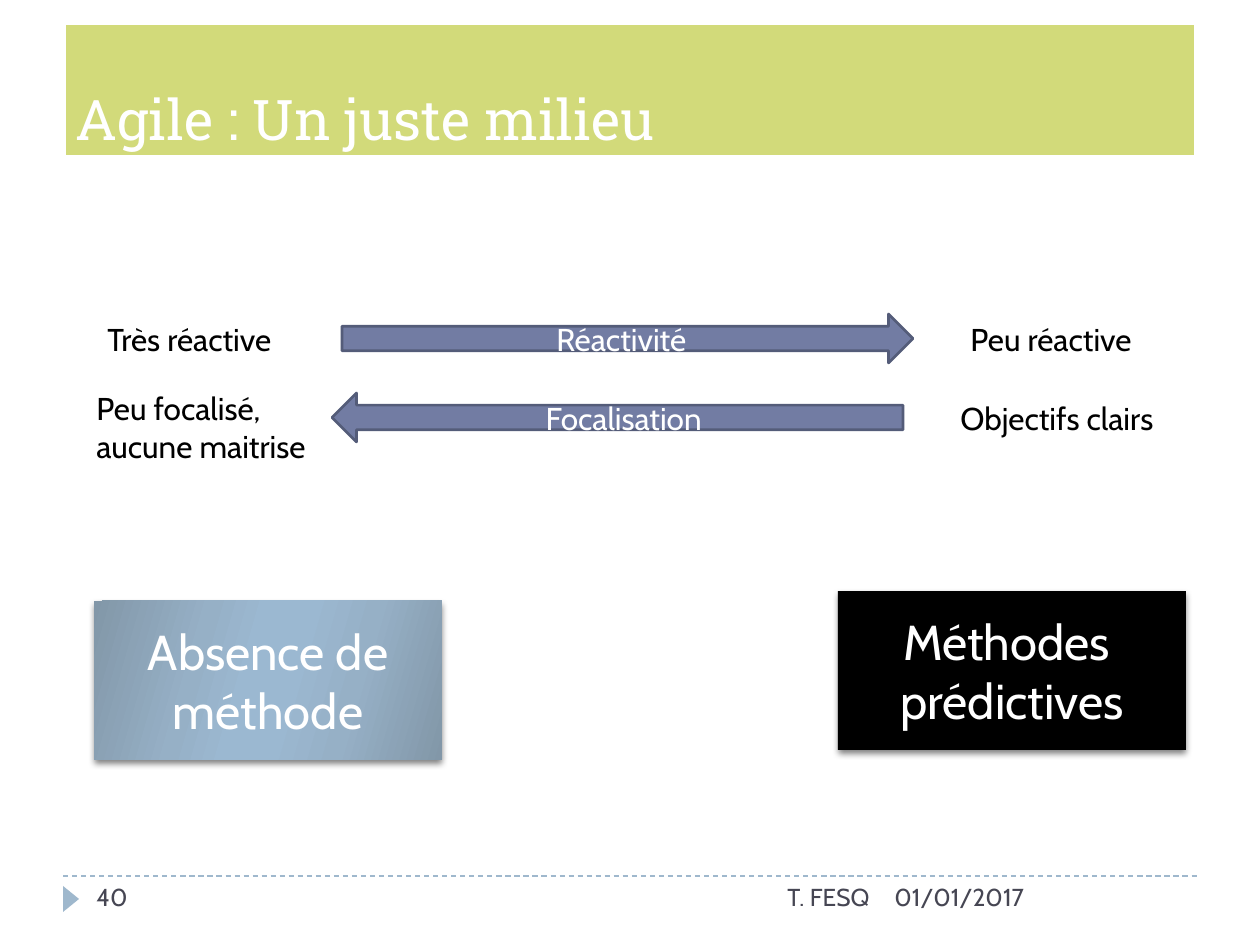
"""Build the slide placing agile between no method and predictive methods."""
from pptx import Presentation, util as u
from pptx.dml.color import RGBColor
from pptx.enum import dml, shapes, text
from pptx.oxml import parse_xml
from pptx.oxml.ns import nsdecls

PX = 914400 / 126
COLORS = {
    "white": "FFFFFF", "black": "000000", "lime": "D2DA7A", "sky": "9FB8CD",
    "slate": "464653", "indigo": "727CA3", "navy": "545C79",
}
LEFT, CENTER, RIGHT = text.PP_ALIGN.LEFT, text.PP_ALIGN.CENTER, text.PP_ALIGN.RIGHT
TOP, MIDDLE, BOTTOM = text.MSO_ANCHOR.TOP, text.MSO_ANCHOR.MIDDLE, text.MSO_ANCHOR.BOTTOM
KIND = shapes.MSO_SHAPE


def add_figure(kind, bounds, fill, line=None, width=0):
    figure = page.shapes.add_shape(kind, *[round(n * PX) for n in bounds])
    figure.shadow.inherit = False
    figure.fill.solid()
    figure.fill.fore_color.rgb = RGBColor.from_string(COLORS[fill])
    if line:
        figure.line.color.rgb = RGBColor.from_string(COLORS[line])
        figure.line.width = u.Pt(width)
    else:
        figure.line.fill.background()
    return figure


def write(box, words, size, color, align=LEFT, anchor=TOP, font="Cabin"):
    frame = box.text_frame
    frame.word_wrap = True
    frame.vertical_anchor = anchor
    frame.text = words
    for para in frame.paragraphs:
        para.alignment = align
        for span in para.runs:
            span.font.name = font
            span.font.size = u.Pt(size)
            span.font.color.rgb = RGBColor.from_string(COLORS[color])


deck = Presentation()
deck.slide_width, deck.slide_height = u.Inches(10), u.Inches(7.5)
page = deck.slides.add_slide(deck.slide_layouts[6])

rule = page.shapes.add_connector(
    shapes.MSO_CONNECTOR.STRAIGHT, *[round(n * PX) for n in (63, 876, 1197, 876)])
rule.line.color.rgb = RGBColor.from_string(COLORS["sky"])
rule.line.width = u.Pt(0.75)
rule.line.dash_style = dml.MSO_LINE.DASH
rule._element.spPr.append(parse_xml(f"<a:effectLst {nsdecls('a')}/>"))

marker = add_figure(KIND.ISOSCELES_TRIANGLE, (58, 891, 26, 16), "sky")
marker.rotation = 90

title = add_figure(KIND.RECTANGLE, (63, 22, 1134, 136), "lime", "white", 3)
write(title, "Agile : Un juste milieu", 32, "white", anchor=BOTTOM, font="Roboto Slab")

labels = [
    ("01/01/2017", (882, 876, 315, 50), 14, "slate", LEFT),
    ("T. FESQ", (399, 876, 483, 50), 14, "slate", RIGHT),
    ("40", (84, 876, 273, 50), 14, "slate", LEFT),
    ("Très réactive", (95, 314, 207, 51), 18, "black", LEFT),
    ("Peu réactive", (958, 314, 207, 51), 18, "black", LEFT),
    ("Peu focalisé, aucune maitrise", (84, 383, 237, 89), 18, "black", LEFT),
    ("Objectifs clairs", (948, 393, 266, 51), 18, "black", LEFT),
]
for words, bounds, size, color, align in labels:
    box = page.shapes.add_textbox(*[round(n * PX) for n in bounds])
    write(box, words, size, color, align)

arrows = [
    (KIND.RIGHT_ARROW, "Réactivité", 342, 314),
    (KIND.LEFT_ARROW, "Focalisation", 332, 393),
]
for kind, words, left, top in arrows:
    arrow = add_figure(kind, (left, top, 571, 49), "indigo", "navy", 1.5)
    write(arrow, words, 18, "white", CENTER, MIDDLE)

cards = [
    ("Méthodes \nprédictives", 838, 591, "black"),
    ("Absence de méthode", 94, 601, "sky"),
]
for words, left, top, fill in cards:
    card = add_figure(KIND.RECTANGLE, (left, top, 348, 159), fill)
    write(card, words, 28, "white", CENTER, MIDDLE)
    card._element.spPr.find(".//{*}effectLst").append(parse_xml(
        f'<a:outerShdw {nsdecls("a")} blurRad="50800" dist="25400" dir="5400000" '
        'rotWithShape="0"><a:srgbClr val="000000"><a:alpha val="50000"/>'
        '</a:srgbClr></a:outerShdw>'))

stops = [(0, "8297A8"), (30, "96B0C6"), (45, "9BB8D1"),
         (55, "9BB8D1"), (73, "96B0C6"), (100, "8297A8")]
stop_list = "".join(
    f'<a:gs pos="{place * 1000}"><a:srgbClr val="{color}"/></a:gs>' for place, color in stops)
properties = card._element.spPr
properties.replace(properties.find("{*}solidFill"), parse_xml(
    f'<a:gradFill {nsdecls("a")} rotWithShape="1"><a:gsLst>{stop_list}</a:gsLst>'
    '<a:lin ang="960000" scaled="0"/></a:gradFill>'))

deck.save("out.pptx")
